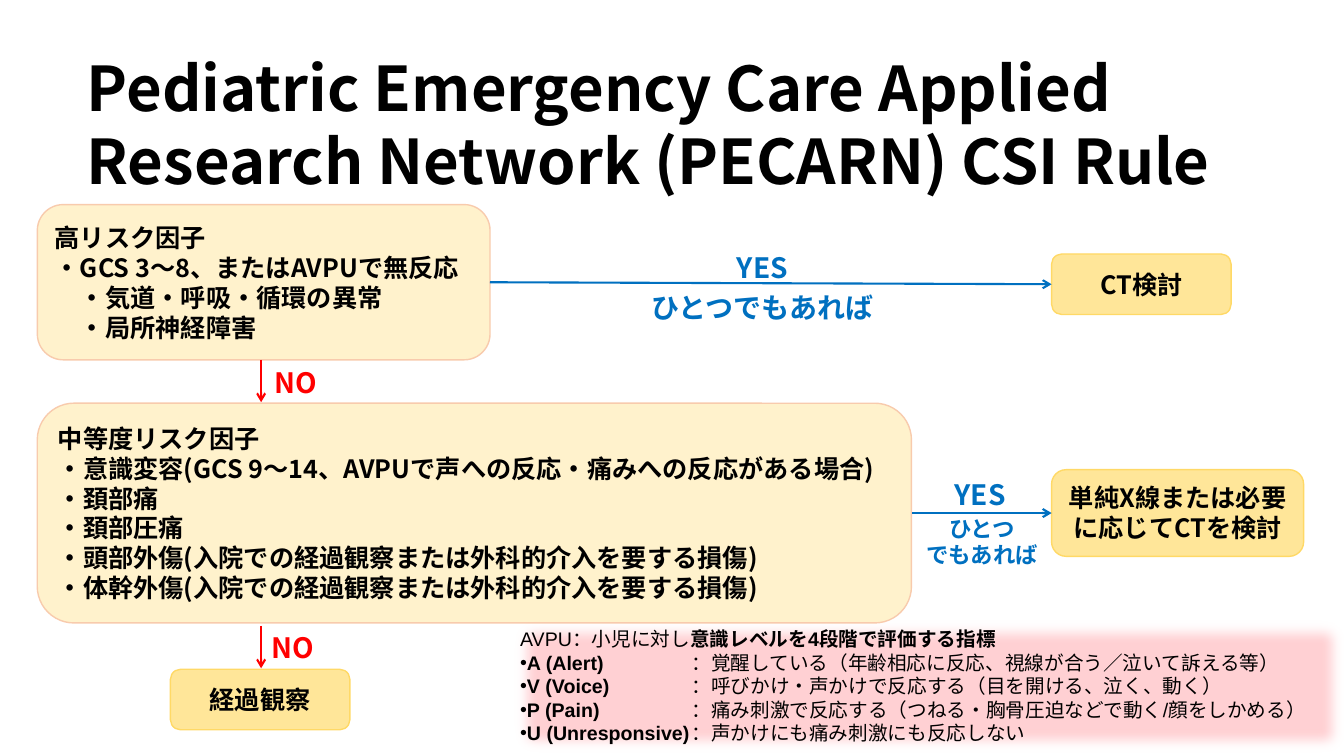
from dataclasses import dataclass

from lxml import etree
from pptx import Presentation
from pptx.dml.color import RGBColor
from pptx.enum.shapes import MSO_CONNECTOR, MSO_SHAPE
from pptx.enum.text import MSO_ANCHOR, MSO_AUTO_SIZE, PP_ALIGN
from pptx.oxml.ns import qn
from pptx.util import Inches, Pt

COLORS = {
    "text": "000000", "yes": "0070C0", "no": "FF0000",
    "risk": "FFF2CC", "risk_line": "F8CBAD",
    "action": "FFE699", "action_line": "FFD966", "note": "FFB1B5",
}
JP_FONT = "Noto Sans CJK JP"
LINE_HEIGHT = 1.19
NO_X = 2.59


@dataclass
class Box:
    area: tuple[float, float, float, float]
    lines: list[str]
    style: str
    align: PP_ALIGN = PP_ALIGN.LEFT
    indented_from: int = 99


@dataclass
class Label:
    area: tuple[float, float, float, float]
    lines: list[str]
    color: str
    size: int = 20
    align: PP_ALIGN = PP_ALIGN.LEFT


@dataclass
class Arrow:
    start: tuple[float, float]
    end: tuple[float, float]
    color: str


ACTION_SIZE = (1.78, 0.6)
BOXES = [
    Box((10.43, 2.52, *ACTION_SIZE), ["CT検討"], "action", PP_ALIGN.CENTER),
    Box((0.37, 2.03, 4.49, 1.54), [
        "高リスク因子",
        "・GCS 3〜8、またはAVPUで無反応",
        "・気道・呼吸・循環の異常",
        "・局所神経障害",
    ], "risk", indented_from=2),
    Box((0.37, 4, 8.67, 2.18), [
        "中等度リスク因子",
        "・意識変容(GCS 9〜14、AVPUで声への反応・痛みへの反応がある場合)",
        "・頚部痛",
        "・頚部圧痛",
        "・頭部外傷(入院での経過観察または外科的介入を要する損傷)",
        "・体幹外傷(入院での経過観察または外科的介入を要する損傷)",
    ], "risk"),
    Box((1.69, 6.64, *ACTION_SIZE), ["経過観察"], "action", PP_ALIGN.CENTER),
    Box((10.43, 4.66, 2.5, 0.86), ["単純X線または必要に応じてCTを検討"],
        "action", PP_ALIGN.CENTER),
]
ARROWS = [
    Arrow((9.05, 5.09), (10.43, 5.09), "yes"),
    Arrow((4.86, 2.8), (10.43, 2.82), "yes"),
    Arrow((NO_X, 3.57), (NO_X, 3.99), "no"),
    Arrow((NO_X, 6.21), (NO_X, 6.63), "no"),
]
LABELS = [
    Label((7.21, 2.44, 0.78, 0.44), ["YES"], "yes"),
    Label((9.37, 4.69, 0.83, 0.44), ["YES"], "yes"),
    Label((2.62, 3.58, 0.86, 0.44), ["NO"], "no"),
    Label((2.59, 6.21, 0.89, 0.44), ["NO"], "no"),
    Label((6.36, 2.84, 2.45, 0.44), ["ひとつでもあれば"], "yes"),
    Label((8.85, 5.06, 1.78, 0.64), ["ひとつ", "でもあれば"], "yes", 16,
          PP_ALIGN.CENTER),
]
AVPU_LEVELS = [
    ("A (Alert)", "：覚醒している（年齢相応に反応、視線が合う／泣いて訴える等）"),
    ("V (Voice)", "：呼びかけ・声かけで反応する（目を開ける、泣く、動く）"),
    ("P (Pain)", "：痛み刺激で反応する（つねる・胸骨圧迫などで動く/顔をしかめる）"),
    ("U (Unresponsive)", "：声かけにも痛み刺激にも反応しない"),
]


def rgb(name: str) -> RGBColor:
    return RGBColor.from_string(COLORS[name])


def add_run(p, text: str, size: int, color: str = "text", bold: bool = True,
            font: str = JP_FONT) -> None:
    r = p.add_run()
    r.text = text
    r.font.size = Pt(size)
    r.font.bold = bold
    r.font.name = font
    r.font.color.rgb = rgb(color)
    etree.SubElement(r.font._element, qn("a:ea"), typeface=JP_FONT)
    p.line_spacing = Pt(round(size * LINE_HEIGHT, 1))


def next_paragraph(tf, index: int):
    """Return the frame's first paragraph for index 0, otherwise a new one."""
    return tf.add_paragraph() if index else tf.paragraphs[0]


def add_filled_shape(slide, kind: MSO_SHAPE, area: tuple, fill: str, line: str):
    sp = slide.shapes.add_shape(kind, *map(Inches, area))
    sp.shadow.inherit = False
    sp.fill.solid()
    sp.fill.fore_color.rgb = rgb(fill)
    sp.line.color.rgb = rgb(line)
    sp.line.width = Pt(1)
    sp.text_frame.word_wrap = True
    sp.text_frame.vertical_anchor = MSO_ANCHOR.MIDDLE
    return sp


def add_box(slide, box: Box) -> None:
    sp = add_filled_shape(slide, MSO_SHAPE.FLOWCHART_ALTERNATE_PROCESS, box.area,
                          box.style, f"{box.style}_line")
    for i, line in enumerate(box.lines):
        p = next_paragraph(sp.text_frame, i)
        p.alignment = box.align
        if i >= box.indented_from:
            p._p.get_or_add_pPr().set("marL", str(Inches(0.25)))
        add_run(p, line, 18)


def add_label(slide, label: Label) -> None:
    tf = slide.shapes.add_textbox(*map(Inches, label.area)).text_frame
    tf.word_wrap = True
    tf.auto_size = MSO_AUTO_SIZE.SHAPE_TO_FIT_TEXT
    for i, line in enumerate(label.lines):
        p = next_paragraph(tf, i)
        p.alignment = label.align
        add_run(p, line, label.size, label.color)


def add_arrow(slide, arrow: Arrow) -> None:
    points = map(Inches, (*arrow.start, *arrow.end))
    cx = slide.shapes.add_connector(MSO_CONNECTOR.STRAIGHT, *points)
    cx.line.color.rgb = rgb(arrow.color)
    cx.line.width = Pt(1.5)
    etree.SubElement(cx.line._get_or_add_ln(), qn("a:tailEnd"), type="arrow")
    etree.SubElement(cx._element.spPr, qn("a:effectLst"))


def add_avpu_note(slide) -> None:
    """Draw the translucent, soft-edged explanation of the AVPU scale."""
    sp = add_filled_shape(slide, MSO_SHAPE.RECTANGLE, (5.06, 6.11, 8.31, 1.39),
                          "note", "note")
    for color in sp._element.spPr.iter(qn("a:srgbClr")):
        etree.SubElement(color, qn("a:alpha"), val="60000")
    effects = sp._element.spPr.find(qn("a:effectLst"))
    etree.SubElement(effects, qn("a:softEdge"), rad=str(Pt(10)))

    p = sp.text_frame.paragraphs[0]
    p.alignment = PP_ALIGN.LEFT
    add_run(p, "AVPU：小児に対し", 14, bold=False, font="Arial")
    add_run(p, "意識レベルを4段階で評価する指標", 14, font="Arial")
    for level, meaning in AVPU_LEVELS:
        p = sp.text_frame.add_paragraph()
        p.alignment = PP_ALIGN.LEFT
        pPr = p._p.get_or_add_pPr()
        etree.SubElement(pPr, qn("a:buFont"), typeface="Arial")
        etree.SubElement(pPr, qn("a:buChar"), char="•")
        tabs = etree.SubElement(pPr, qn("a:tabLst"))
        etree.SubElement(tabs, qn("a:tab"), pos=str(Inches(1.7)), algn="l")
        add_run(p, f"{level}\t", 14, font="Arial")
        add_run(p, meaning, 14, bold=False, font="Arial")


def add_title(slide) -> None:
    title = slide.shapes.title
    title.left, title.top, title.width, title.height = map(
        Inches, (0.76, 0.45, 11.81, 1.58))
    tf = title.text_frame
    tf.word_wrap = True
    tf.auto_size = MSO_AUTO_SIZE.SHAPE_TO_FIT_TEXT
    tf.vertical_anchor = MSO_ANCHOR.TOP
    p = tf.paragraphs[0]
    p.alignment = PP_ALIGN.LEFT
    add_run(p, "Pediatric Emergency Care Applied Research Network (PECARN) CSI Rule", 44)


def main() -> None:
    prs = Presentation()
    prs.slide_width, prs.slide_height = Inches(13.33), Inches(7.5)
    slide = prs.slides.add_slide(prs.slide_layouts[5])
    add_title(slide)
    for box in BOXES:
        add_box(slide, box)
    for arrow in ARROWS:
        add_arrow(slide, arrow)
    for label in LABELS:
        add_label(slide, label)
    add_avpu_note(slide)
    prs.save("out.pptx")


if __name__ == "__main__":
    main()
